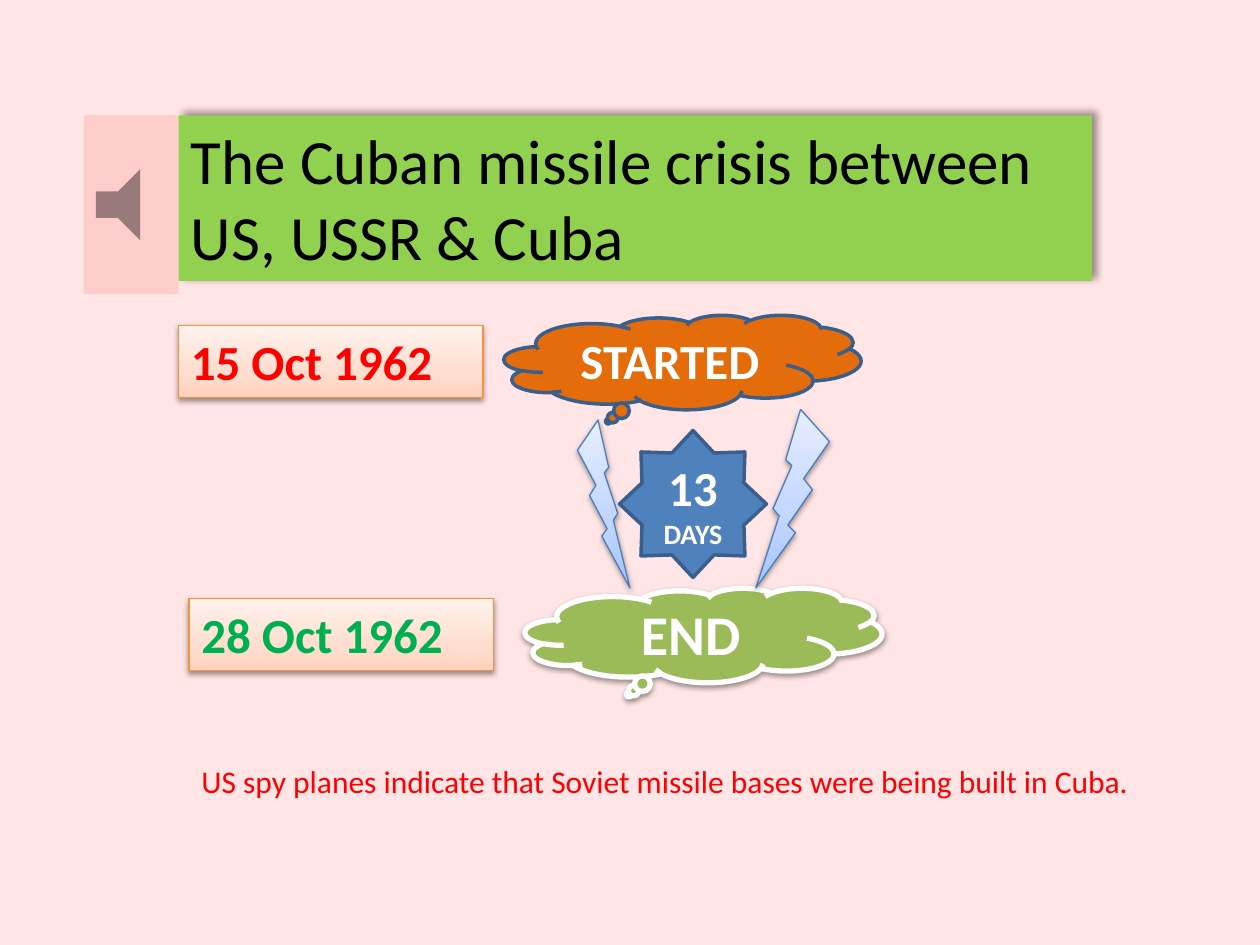
from lxml.etree import SubElement
from pptx import Presentation
from pptx.dml.color import RGBColor
from pptx.enum.shapes import MSO_SHAPE as SHAPE
from pptx.enum.text import MSO_ANCHOR as ANCHOR, PP_ALIGN as ALIGN
from pptx.oxml.ns import qn
from pptx.util import Pt

FONT = "Calibri"
BACKGROUND = RGBColor(0xFF, 0xE5, 0xE5)
PINK = RGBColor(0xFF, 0xCC, 0xCC)
LIME = RGBColor(0x92, 0xD0, 0x50)
OLIVE = RGBColor(0x9B, 0xBB, 0x59)
GREEN = RGBColor(0x00, 0xB0, 0x50)
RED = RGBColor(0xFF, 0x00, 0x00)
DARK_ORANGE = RGBColor(0xE4, 0x6C, 0x0A)
ORANGE = RGBColor(0xF6, 0x92, 0x40)
BLUE = RGBColor(0x4F, 0x81, 0xBD)
MID_BLUE = RGBColor(0x4B, 0x7E, 0xBC)
DARK_BLUE = RGBColor(0x3A, 0x5F, 0x8C)
BLACK = RGBColor(0, 0, 0)
WHITE = RGBColor(0xFF, 0xFF, 0xFF)

# Gradient stops (percent, colour), running from bottom to top
PEACH_FADE = [(0, "FFD2BD"), (35, "FFDED0"), (100, "FFF2ED")]
BLUE_FADE = [(0, "A4C4FF"), (35, "BFD4FF"), (100, "E6EEFF")]

# Shadows: opacity percent, blur, distance, direction in degrees
TITLE_SHADOW = (40, 4, 3, 315)
SOFT_SHADOW = (38, 3.1, 1.6, 90)

# Content: positions are left, top, width, height in points
TITLE = ("The Cuban missile crisis between US, USSR & Cuba", (102, 66, 522, 94.5))
DATES = [
    ("15 Oct 1962", (102, 186, 174, 41.2), RED),
    ("28 Oct 1962", (108, 342, 174, 41.2), GREEN),
]
CLOUDS = [
    ("STARTED", 28, (288, 180, 204, 54), DARK_ORANGE, (DARK_BLUE, 2), None),
    ("END", 32, (300, 336, 204, 54), OLIVE, (WHITE, 3), SOFT_SHADOW),
]
SOUND_BUTTON = (48, 66, 54, 102)
BOLTS = [((330, 240, 30, 96), False), ((432, 234, 42, 102), True)]
DURATION = ([("13 ", 28), ("DAYS", 16)], (354, 246, 84, 84))
NOTE = ("US spy planes indicate that Soviet missile bases were being built in Cuba.",
        (108, 432, 546.5, 29))


def set_gradient(sp, stops):
    sp.fill.gradient()
    grad = sp._element.spPr.find(qn("a:gradFill"))
    gs_list = grad.find(qn("a:gsLst"))
    for old in list(gs_list):
        gs_list.remove(old)
    for percent, color in stops:
        gs = SubElement(gs_list, qn("a:gs"), pos=str(percent * 1000))
        SubElement(gs, qn("a:srgbClr"), val=color)
    grad.find(qn("a:lin")).set("ang", str(270 * 60000))


def set_shadow(sp, opacity, blur, distance, direction):
    effects = sp._element.spPr.find(qn("a:effectLst"))
    outer = SubElement(effects, qn("a:outerShdw"), blurRad=str(Pt(blur)),
                       dist=str(Pt(distance)), dir=str(direction * 60000),
                       rotWithShape="0")
    color = SubElement(outer, qn("a:srgbClr"), val="000000")
    SubElement(color, qn("a:alpha"), val=str(opacity * 1000))


def add_shape(kind, box, fill, line=None, shadow=None):
    sp = slide.shapes.add_shape(kind, *map(Pt, box))
    sp.shadow.inherit = False
    if isinstance(fill, list):
        set_gradient(sp, fill)
    else:
        sp.fill.solid()
        sp.fill.fore_color.rgb = fill
    if line:
        sp.line.color.rgb, sp.line.width = line[0], Pt(line[1])
    else:
        sp.line.fill.background()
    if shadow:
        set_shadow(sp, *shadow)
    return sp


def write(sp, runs, color, bold=False, centered=False):
    tf = sp.text_frame
    tf.word_wrap = True
    tf.vertical_anchor = ANCHOR.MIDDLE if centered else ANCHOR.TOP
    p = tf.paragraphs[0]
    p.alignment = ALIGN.CENTER if centered else ALIGN.LEFT
    for text, size in runs:
        r = p.add_run()
        r.text = text
        r.font.name, r.font.size, r.font.bold = FONT, Pt(size), bold
        r.font.color.rgb = color


prs = Presentation()
prs.slide_width, prs.slide_height = Pt(720), Pt(540)
slide = prs.slides.add_slide(prs.slide_layouts[6])
slide.background.fill.solid()
slide.background.fill.fore_color.rgb = BACKGROUND

# Title
text, box = TITLE
write(add_shape(SHAPE.RECTANGLE, box, LIME, shadow=TITLE_SHADOW), [(text, 36)], BLACK)

# Dates
for text, box, color in DATES:
    sp = add_shape(SHAPE.RECTANGLE, box, PEACH_FADE, (ORANGE, 0.75), SOFT_SHADOW)
    write(sp, [(text, 28)], color, bold=True)

# Start and end clouds
for text, size, box, fill, line, shadow in CLOUDS:
    sp = add_shape(SHAPE.CLOUD_CALLOUT, box, fill, line, shadow)
    write(sp, [(text, size)], WHITE, bold=True, centered=True)

# Sound button
add_shape(SHAPE.ACTION_BUTTON_SOUND, SOUND_BUTTON, PINK)

# Lightning bolts
for box, flipped in BOLTS:
    sp = add_shape(SHAPE.LIGHTNING_BOLT, box, BLUE_FADE, (MID_BLUE, 0.75), SOFT_SHADOW)
    if flipped:
        sp._element.spPr.find(qn("a:xfrm")).set("flipH", "1")

# Duration star
runs, box = DURATION
sp = add_shape(SHAPE.STAR_8_POINT, box, BLUE, (DARK_BLUE, 2))
write(sp, runs, WHITE, bold=True, centered=True)

# Note
text, box = NOTE
write(slide.shapes.add_textbox(*map(Pt, box)), [(text, 18)], RED)

prs.save("out.pptx")
